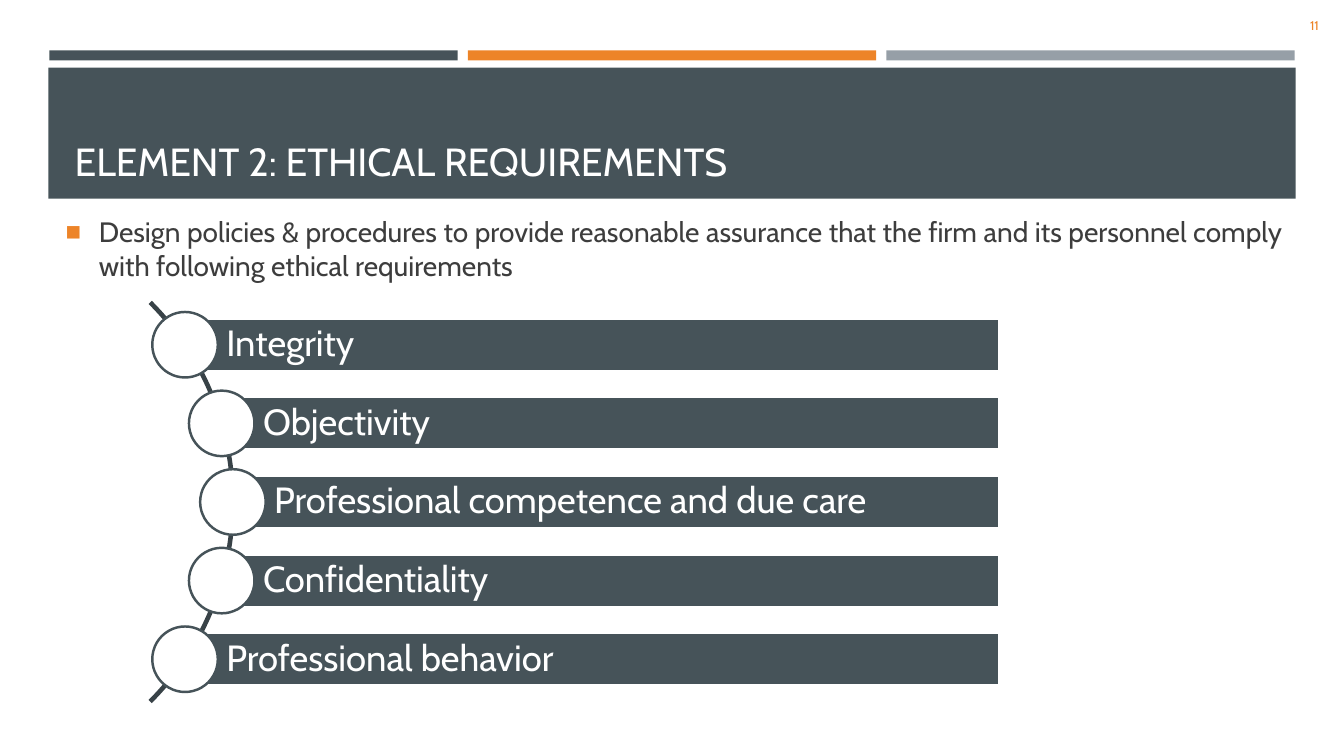
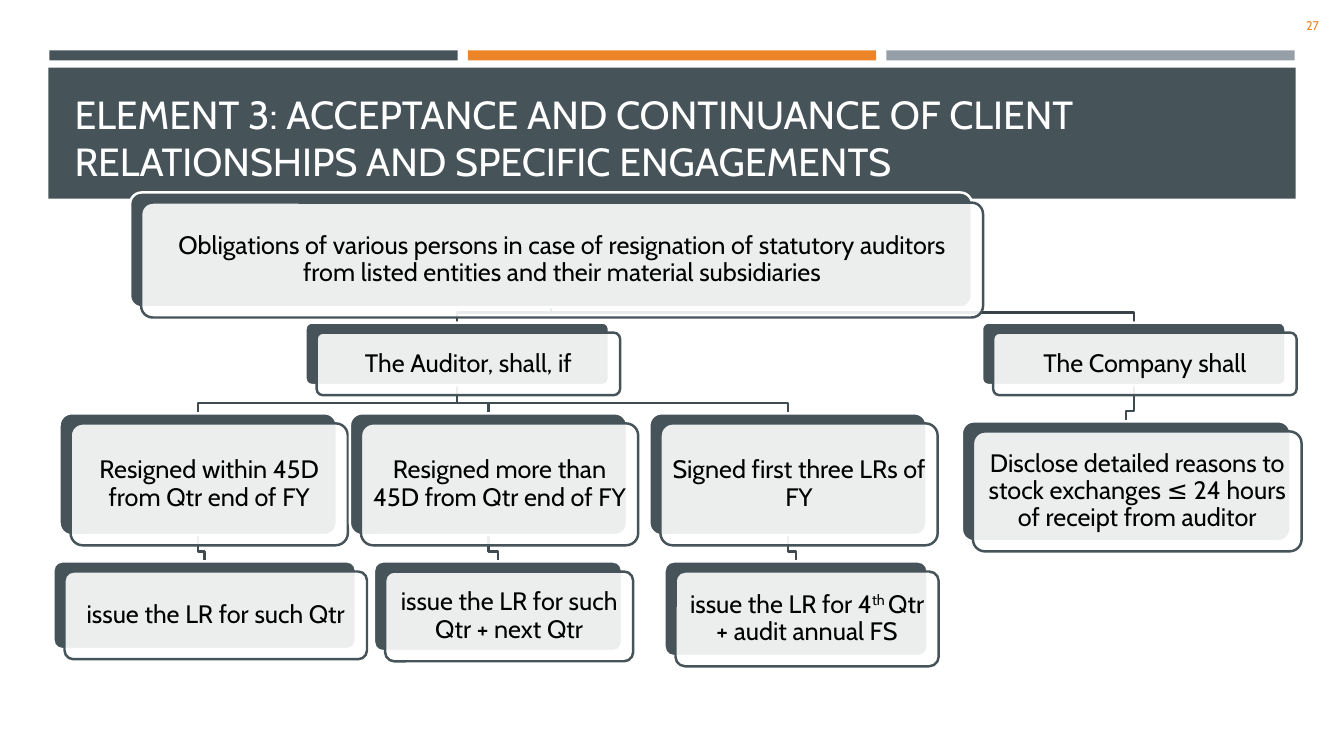
from math import sqrt

from lxml.etree import SubElement
from pptx import Presentation
from pptx.dml.color import RGBColor
from pptx.enum.shapes import MSO_SHAPE as Shape
from pptx.enum.text import MSO_ANCHOR as Anchor, MSO_AUTO_SIZE as AutoSize, PP_ALIGN as Align
from pptx.oxml.ns import qn
from pptx.util import Inches, Pt

FONT = "Cabin"
COLORS = {
    "slate": "465359",
    "orange": "ED8428",
    "gray": "969FA7",
    "white": "FFFFFF",
    "black": "000000",
    "body": "3D3D3D",
    "dark": "384247",
    "branch": "404B51",
}
TITLE_AND_BODY, TITLE_ONLY = 1, 5
BANDS = [
    (0.49, 0.5, 4.05, 0.1, "slate"),
    (4.64, 0.5, 4.05, 0.1, "orange"),
    (8.79, 0.5, 4.05, 0.1, "gray"),
    (0.48, 0.67, 12.37, 1.3, "slate"),
]


def color(name):
    return RGBColor.from_string(COLORS[name])


class Deck:
    """Holds the shared style and the slide being filled."""

    def __init__(self):
        self.prs = Presentation()
        self.prs.slide_width, self.prs.slide_height = Inches(13.33), Inches(7.5)
        self.slide = None

    def new_slide(self, layout, title, number):
        self.slide = self.prs.slides.add_slide(self.prs.slide_layouts[layout])
        for *box, fill in BANDS:
            self.shape(Shape.RECTANGLE, box, fill)
        heading = self.slide.shapes.title
        self.slide.shapes.element.append(heading.element)  # in front of the bands
        self.place(heading, (0.64, 0.77, 12.06, 1.11))
        self.set_text(heading, title, 28, "white", anchor=Anchor.BOTTOM)
        page = self.slide.shapes.add_textbox(*map(Inches, (12.03, 0.05, 1.15, 0.4)))
        self.set_text(page, str(number), 9, "orange", Align.RIGHT)

    def place(self, placeholder, box):
        placeholder.left, placeholder.top, placeholder.width, placeholder.height = map(Inches, box)

    def set_text(self, shape, text, size, ink, align=Align.LEFT, anchor=Anchor.MIDDLE,
                 spacing=None):
        """Fill a shape with one paragraph; parts between ^ marks are superscript."""
        frame = shape.text_frame
        frame.word_wrap, frame.auto_size = True, AutoSize.NONE
        frame.vertical_anchor = anchor
        paragraph = frame.paragraphs[0]
        for index, part in enumerate(text.split("^")):
            run = paragraph.add_run()
            run.text = part
            if index % 2:
                run._r.get_or_add_rPr().set("baseline", "30000")
        paragraph.alignment = align
        paragraph.line_spacing = spacing
        font = paragraph.font
        font.name, font.size, font.color.rgb = FONT, Pt(size), color(ink)
        return paragraph

    def outline(self, shape, ink, width=1.75):
        shape.line.color.rgb = color(ink)
        shape.line.width = Pt(width)

    def shape(self, kind, box, fill=None, line=None, width=1.75, alpha=None):
        shape = self.slide.shapes.add_shape(kind, *map(Inches, box))
        shape.shadow.inherit = False
        if fill:
            shape.fill.solid()
            shape.fill.fore_color.rgb = color(fill)
        else:
            shape.fill.background()
        if alpha:
            tint = shape.element.spPr.find(qn("a:solidFill"))[0]
            SubElement(tint, qn("a:alpha"), val=str(alpha * 1000))
        if line:
            self.outline(shape, line, width)
        else:
            shape.line.fill.background()
        return shape

    def bullet(self, text):
        body = self.slide.placeholders[1]
        self.place(body, (0.55, 2.08, 12.28, 4.02))
        paragraph = body.text_frame.paragraphs[0]
        props = paragraph._p.get_or_add_pPr()
        props.set("marL", str(Inches(0.33)))
        props.set("indent", str(Inches(-0.33)))
        SubElement(SubElement(props, qn("a:buClr")), qn("a:srgbClr"), val=COLORS["orange"])
        SubElement(props, qn("a:buSzPct"), val="92000")
        SubElement(props, qn("a:buChar"), char="■")
        self.set_text(body, text, 20, "body", Align.JUSTIFY, Anchor.TOP)
        paragraph.space_before, paragraph.space_after = Pt(4), Pt(6)

    def curved_list(self, items):
        """Bars whose round markers sit on an arc bulging to the right."""
        center_x, center_y, radius = -0.49, 4.98, 2.8
        step, bar_height, marker, right = 0.78, 0.52, 0.65, 9.91
        arc = self.shape(Shape.ARC, (center_x - radius, center_y - radius, 2 * radius, 2 * radius),
                         line="dark", width=3.25)
        arc.adjustments[0], arc.adjustments[1] = 189, 27  # 315 to 45 degrees
        for index, item in enumerate(items):
            rise = (index - (len(items) - 1) / 2) * step
            x, y = center_x + sqrt(radius ** 2 - rise ** 2), center_y + rise
            bar = self.shape(Shape.RECTANGLE, (x, y - bar_height / 2, right - x, bar_height),
                             "slate", "white")
            bar.text_frame.margin_left = Inches(0.41)
            self.set_text(bar, item, 26, "white", spacing=0.9)
            self.shape(Shape.OVAL, (x - marker / 2, y - marker / 2, marker, marker),
                       "white", "slate")

    def card(self, box, text):
        """A pale card in front of a dark one, shifted down and right."""
        left, top, width, height = box
        back = self.shape(Shape.ROUNDED_RECTANGLE, box, "slate", "white")
        front = self.shape(Shape.ROUNDED_RECTANGLE, (left + 0.11, top + 0.1, width, height),
                           "white", "slate", alpha=90)
        for layer in (back, front):
            layer.adjustments[0] = 0.1
        frame = front.text_frame
        frame.margin_left = frame.margin_right = Inches(0.07)
        frame.margin_top = frame.margin_bottom = Inches(0.07)
        self.set_text(front, text, 18, "black", Align.CENTER, spacing=0.9)

    def branch(self, parent, child, ink):
        """An elbow line from the bottom of one box to the top of another."""
        start_x, end_x = (Inches(left + width / 2) for left, _, width, _ in (parent, child))
        start_y, end_y = Inches(parent[1] + parent[3]), Inches(child[1])
        bend_y = end_y - Inches(0.1)
        elbow = self.slide.shapes.build_freeform(start_x, start_y)
        elbow.add_line_segments([(start_x, bend_y), (end_x, bend_y), (end_x, end_y)], close=False)
        line = elbow.convert_to_shape()
        line.shadow.inherit = False
        line.fill.background()
        self.outline(line, ink)

    def tree(self, cards):
        """Cards map a key to parent key, box and text."""
        for parent, box, _ in cards.values():
            if parent:
                grandparent, parent_box, _ = cards[parent]
                self.branch(parent_box, box, "branch" if grandparent else "dark")
        for _, box, text in cards.values():
            self.card(box, text)


OBLIGATIONS = {
    "root": (None, (1.29, 1.91, 8.35, 1.14),
             "Obligations of various persons in case of resignation of statutory auditors "
             "from listed entities and their material subsidiaries"),
    "company": ("root", (9.74, 3.2, 3.01, 0.62), "The Company shall"),
    "disclose": ("company", (9.54, 4.18, 3.26, 1.19),
                 "Disclose detailed reasons to stock exchanges ≤ 24 hours of receipt from auditor"),
    "auditor": ("root", (3.03, 3.2, 3.01, 0.62), "The Auditor, shall, if"),
    "within": ("auditor", (0.59, 4.1, 2.75, 1.21), "Resigned within 45D from Qtr end of FY"),
    "such": ("within", (0.53, 5.57, 3, 0.87), "issue the LR for such Qtr"),
    "after": ("auditor", (3.47, 4.1, 2.75, 1.21), "Resigned more than 45D from Qtr end of FY"),
    "next": ("after", (3.71, 5.57, 2.46, 0.89), "issue the LR for such Qtr + next Qtr"),
    "signed": ("auditor", (6.44, 4.1, 2.75, 1.21), "Signed first three LRs of FY"),
    "annual": ("signed", (6.59, 5.57, 2.61, 0.94), "issue the LR for 4^th ^Qtr + audit annual FS"),
}


def main():
    deck = Deck()
    deck.new_slide(TITLE_AND_BODY, "ELEMENT 2: ETHICAL REQUIREMENTS", 11)
    deck.bullet("Design policies & procedures to provide reasonable assurance that the firm "
                "and its personnel comply with following ethical requirements")
    deck.curved_list(["Integrity", "Objectivity", "Professional competence and due care",
                      "Confidentiality", "Professional behavior"])

    deck.new_slide(TITLE_ONLY, "ELEMENT 3: ACCEPTANCE AND CONTINUANCE OF CLIENT "
                               "RELATIONSHIPS AND SPECIFIC ENGAGEMENTS", 27)
    deck.tree(OBLIGATIONS)
    deck.prs.save("out.pptx")


if __name__ == "__main__":
    main()
